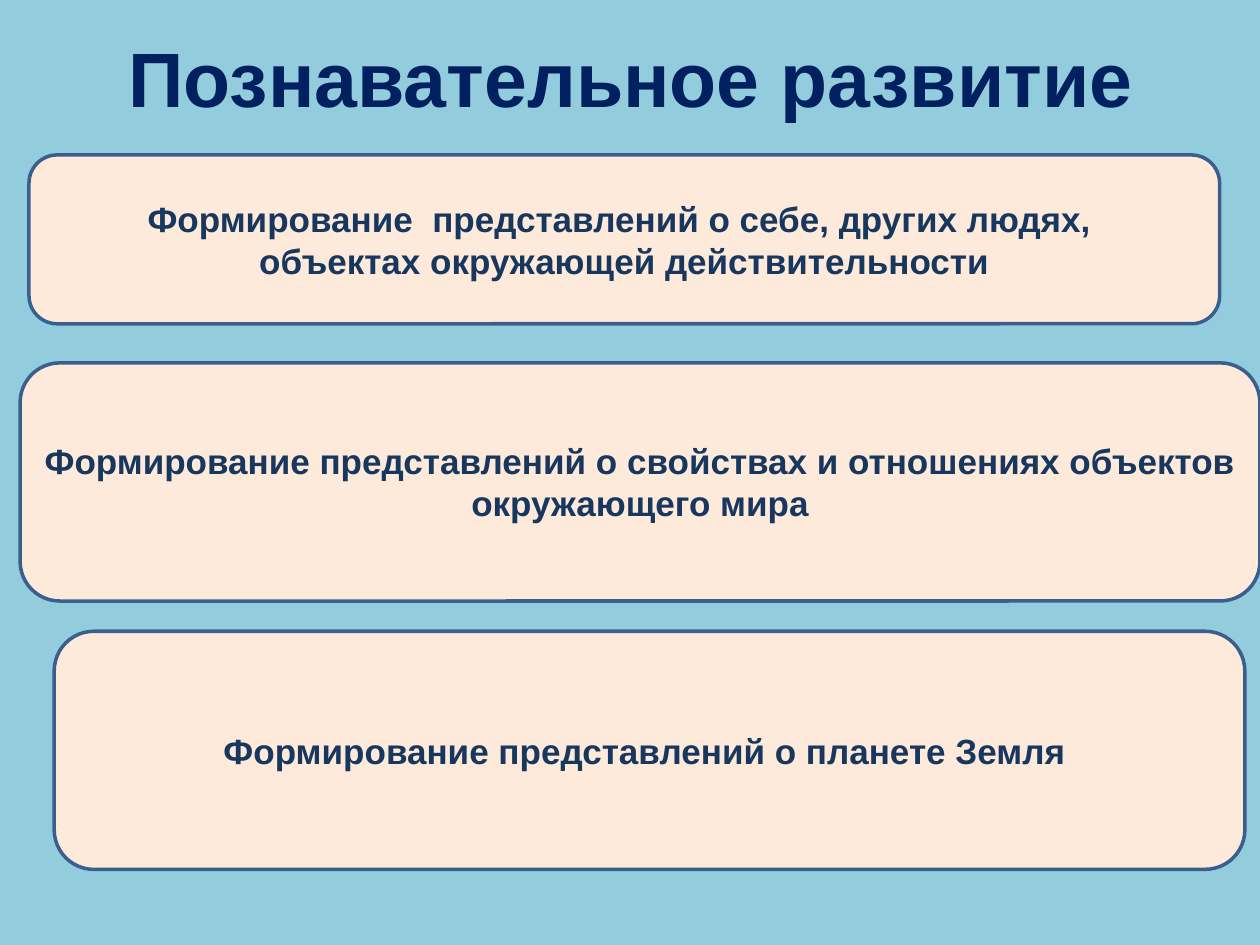
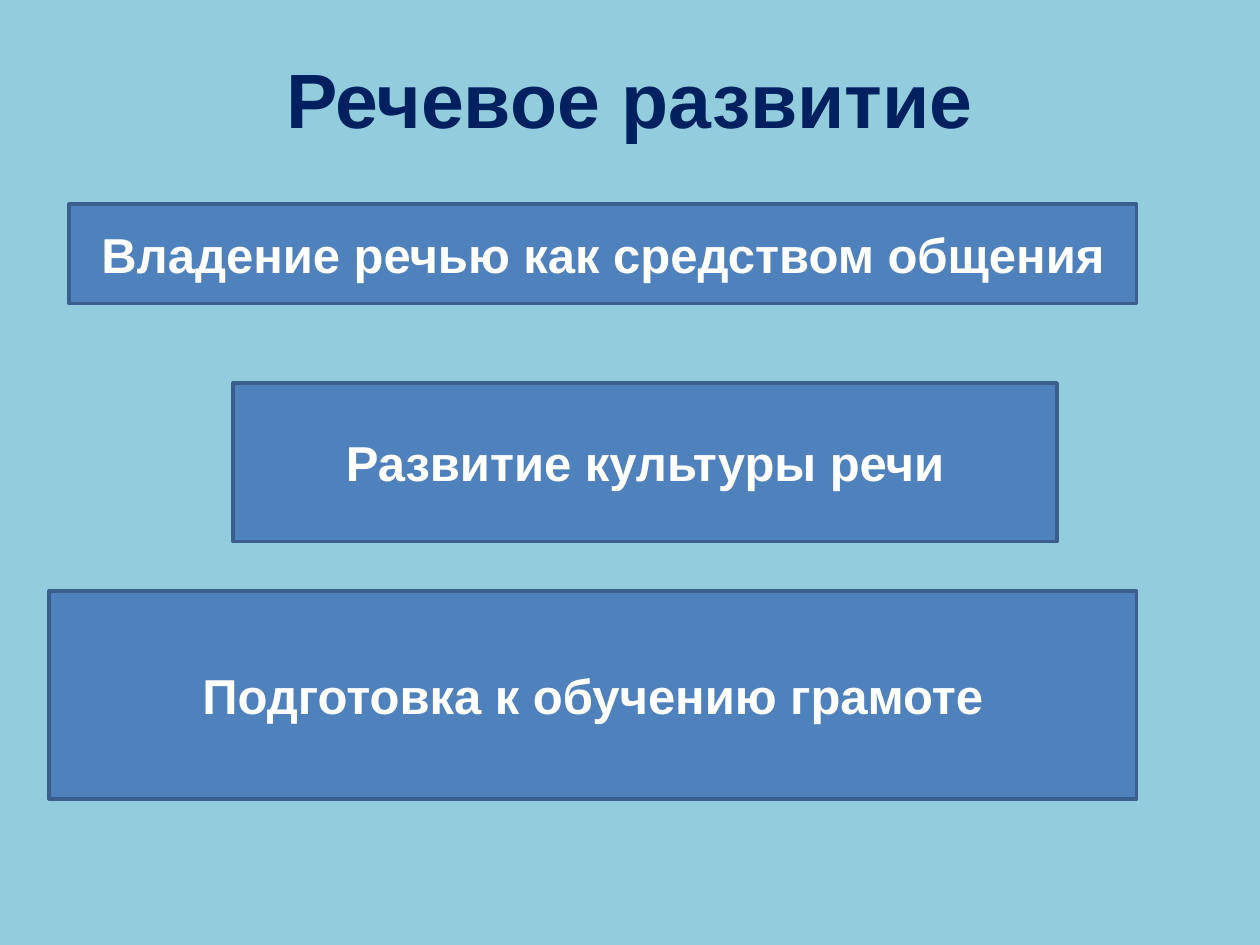
from dataclasses import dataclass

from pptx import Presentation
from pptx.dml.color import RGBColor
from pptx.enum.shapes import MSO_SHAPE as Shape
from pptx.enum.text import MSO_ANCHOR as Anchor, PP_ALIGN as Align
from pptx.util import Inches, Pt

WIDE, HIGH = Inches(10), Inches(7.5)
COLS, ROWS = 100, 75
FONT = "Arial"
COLORS = {
    "sky": "93CDDD",
    "navy": "002060",
    "cream": "FDEADA",
    "ink": "17375E",
    "blue": "4F81BD",
    "edge": "3A5F8C",
    "white": "FFFFFF",
}


@dataclass(frozen=True)
class Area:
    """A place on the grid, in columns and rows."""
    col: float
    row: float
    cols: float
    rows: float

    def box(self) -> tuple[int, int, int, int]:
        return (int(WIDE * self.col / COLS), int(HIGH * self.row / ROWS),
                int(WIDE * self.cols / COLS), int(HIGH * self.rows / ROWS))


@dataclass(frozen=True)
class Style:
    form: Shape
    fill: str
    ink: str
    size: int


@dataclass(frozen=True)
class Card:
    area: Area
    lines: tuple[str, ...]


@dataclass(frozen=True)
class Page:
    title: str
    head: Area
    style: Style
    cards: tuple[Card, ...]


ROUND = Style(Shape.ROUNDED_RECTANGLE, "cream", "ink", 20)
BLOCK = Style(Shape.RECTANGLE, "blue", "white", 28)

PAGES = (
    Page("Познавательное развитие", Area(5.1, 2.9, 90, 6.4), ROUND, (
        Card(Area(2.3, 12.3, 94.5, 13.4),
             ("Формирование  представлений о себе, других людях, ",
              "объектах окружающей действительности")),
        Card(Area(1.6, 28.8, 98.4, 18.9),
             ("Формирование представлений о свойствах и отношениях "
              "объектов окружающего мира",)),
        Card(Area(4.3, 50.1, 94.5, 18.9),
             ("Формирование представлений о планете Земля ",)),
    )),
    Page("Речевое развитие", Area(5, 3, 90, 9.5), BLOCK, (
        Card(Area(18.5, 30.4, 65.4, 12.6), ("Развитие культуры речи",)),
        Card(Area(5.5, 16.2, 84.7, 7.9),
             ("Владение речью как средством общения",)),
        Card(Area(3.9, 46.9, 86.3, 16.5),
             ("Подготовка к обучению грамоте",)),
    )),
)


def color(name: str) -> RGBColor:
    return RGBColor.from_string(COLORS[name])


def write(frame, lines: tuple[str, ...], size: int, ink: str) -> None:
    """Fill a text frame with bold, centred lines, one paragraph each."""
    frame.word_wrap = True
    frame.vertical_anchor = Anchor.MIDDLE
    for i, line in enumerate(lines):
        para = frame.add_paragraph() if i else frame.paragraphs[0]
        para.alignment = Align.CENTER
        run = para.add_run()
        run.text = line
        font = run.font
        font.name, font.size, font.bold = FONT, Pt(size), True
        font.color.rgb = color(ink)


def draw_card(slide, card: Card, style: Style) -> None:
    shape = slide.shapes.add_shape(style.form, *card.area.box())
    shape.shadow.inherit = False
    shape.fill.solid()
    shape.fill.fore_color.rgb = color(style.fill)
    shape.line.color.rgb = color("edge")
    shape.line.width = Pt(2)
    write(shape.text_frame, card.lines, style.size, style.ink)


def draw_page(deck, page: Page) -> None:
    slide = deck.slides.add_slide(deck.slide_layouts[6])
    back = slide.background.fill
    back.solid()
    back.fore_color.rgb = color("sky")
    title = slide.shapes.add_textbox(*page.head.box())
    write(title.text_frame, (page.title,), 44, "navy")
    for card in page.cards:
        draw_card(slide, card, page.style)


def main() -> None:
    deck = Presentation()
    deck.slide_width, deck.slide_height = WIDE, HIGH
    for page in PAGES:
        draw_page(deck, page)
    deck.save("out.pptx")


if __name__ == "__main__":
    main()
